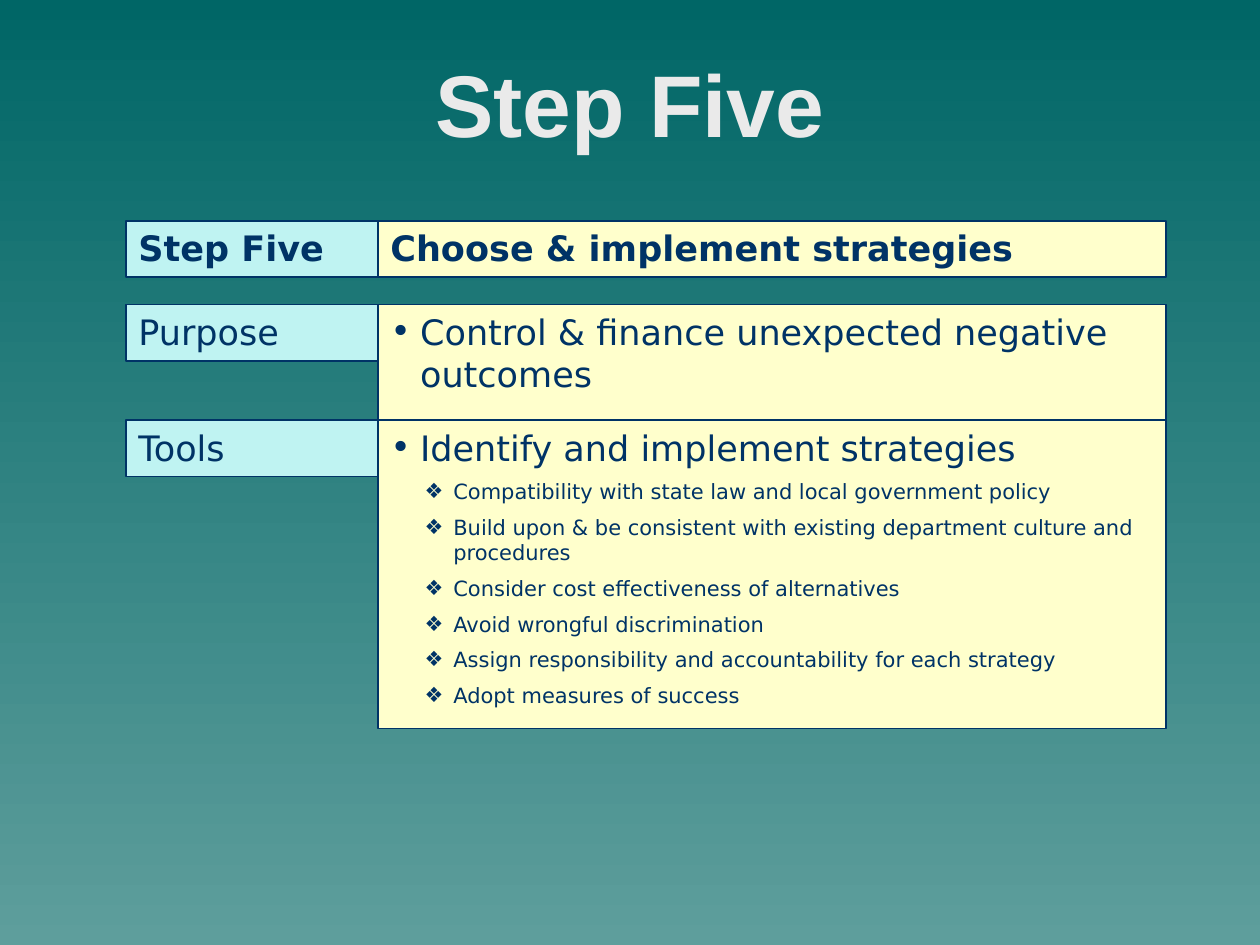
from dataclasses import dataclass

from lxml.etree import SubElement
from pptx import Presentation
from pptx.dml.color import RGBColor
from pptx.enum.shapes import MSO_SHAPE
from pptx.enum.text import MSO_ANCHOR, PP_ALIGN
from pptx.oxml.ns import qn
from pptx.slide import Slide
from pptx.util import Cm, Pt


@dataclass(frozen=True)
class Theme:
    background_top: str = "006666"
    background_bottom: str = "5E9E9C"
    title: str = "EAEAEA"
    ink: str = "003366"
    label_fill: str = "BFF3F2"
    content_fill: str = "FFFFCC"
    title_font: str = "Arial"
    body_font: str = "DejaVu Sans"
    title_size: int = 50
    body_size: int = 20
    detail_size: int = 12


@dataclass(frozen=True)
class Bullet:
    symbol: str
    indent: float
    hanging: float


@dataclass(frozen=True)
class Line:
    text: str
    size: int
    bold: bool = False
    bullet: Bullet | None = None


@dataclass(frozen=True)
class Row:
    label: str
    lines: tuple[Line, ...]
    top: float
    height: float
    bold: bool = False


THEME = Theme()
DOT = Bullet("•", 0.6, 0.6)
DIAMOND = Bullet("❖", 1.27, 0.58)
LABEL_LEFT, LABEL_WIDTH, LABEL_HEIGHT = 2.54, 5.08, 1.14
CONTENT_LEFT, CONTENT_WIDTH = LABEL_LEFT + LABEL_WIDTH, 15.88

TOOL_DETAILS = (
    "Compatibility with state law and local government policy",
    "Build upon & be consistent with existing department culture and procedures",
    "Consider cost effectiveness of alternatives",
    "Avoid wrongful discrimination",
    "Assign responsibility and accountability for each strategy",
    "Adopt measures of success",
)

ROWS = (
    Row(
        "Step Five",
        (Line("Choose & implement strategies", THEME.body_size, bold=True),),
        4.45, LABEL_HEIGHT, bold=True,
    ),
    Row(
        "Purpose",
        (Line("Control & finance unexpected negative outcomes", THEME.body_size, bullet=DOT),),
        6.14, 3.25,
    ),
    Row(
        "Tools",
        (
            Line("Identify and implement strategies", THEME.body_size, bullet=DOT),
            *(Line(detail, THEME.detail_size, bullet=DIAMOND) for detail in TOOL_DETAILS),
        ),
        8.47, 6.22,
    ),
)


def color(value: str) -> RGBColor:
    return RGBColor.from_string(value)


def add_bullet(paragraph, bullet: Bullet) -> None:
    properties = paragraph._p.get_or_add_pPr()
    properties.set("marL", str(Cm(bullet.indent)))
    properties.set("indent", str(-Cm(bullet.hanging)))
    SubElement(properties, qn("a:buFont"), typeface=THEME.body_font)
    SubElement(properties, qn("a:buChar"), char=bullet.symbol)


def add_run(paragraph, text: str, font_name: str, size: int, ink: str, bold: bool) -> None:
    run = paragraph.add_run()
    run.text = text
    run.font.name = font_name
    run.font.size = Pt(size)
    run.font.bold = bold
    run.font.color.rgb = color(ink)


def add_box(
    slide: Slide, left: float, top: float, width: float, height: float,
    fill: str, lines: tuple[Line, ...],
) -> None:
    shape = slide.shapes.add_shape(
        MSO_SHAPE.RECTANGLE, Cm(left), Cm(top), Cm(width), Cm(height)
    )
    shape.shadow.inherit = False
    shape.fill.solid()
    shape.fill.fore_color.rgb = color(fill)
    shape.line.color.rgb = color(THEME.ink)
    shape.line.width = Pt(1)
    frame = shape.text_frame
    frame.word_wrap = True
    frame.vertical_anchor = MSO_ANCHOR.TOP
    for index, line in enumerate(lines):
        paragraph = frame.add_paragraph() if index else frame.paragraphs[0]
        paragraph.alignment = PP_ALIGN.LEFT
        if index:
            paragraph.space_before = Pt(line.size / 2)
        if line.bullet:
            add_bullet(paragraph, line.bullet)
        add_run(paragraph, line.text, THEME.body_font, line.size, THEME.ink, line.bold)


def add_row(slide: Slide, row: Row) -> None:
    label = (Line(row.label, THEME.body_size, row.bold),)
    add_box(slide, LABEL_LEFT, row.top, LABEL_WIDTH, LABEL_HEIGHT, THEME.label_fill, label)
    add_box(
        slide, CONTENT_LEFT, row.top, CONTENT_WIDTH, row.height, THEME.content_fill, row.lines
    )


def set_background(slide: Slide) -> None:
    fill = slide.background.fill
    fill.gradient()
    fill.gradient_angle = 270
    for stop, value in zip(fill.gradient_stops, (THEME.background_top, THEME.background_bottom)):
        stop.color.rgb = color(value)


def set_title(slide: Slide, text: str) -> None:
    title = slide.shapes.title
    title.left, title.top, title.width, title.height = Cm(1.27), Cm(0.76), Cm(22.86), Cm(2.62)
    title.text_frame.vertical_anchor = MSO_ANCHOR.MIDDLE
    paragraph = title.text_frame.paragraphs[0]
    paragraph.alignment = PP_ALIGN.CENTER
    add_run(paragraph, text, THEME.title_font, THEME.title_size, THEME.title, True)


def main() -> None:
    presentation = Presentation()
    presentation.slide_width, presentation.slide_height = Cm(25.4), Cm(19.05)
    slide = presentation.slides.add_slide(presentation.slide_layouts[5])
    set_background(slide)
    set_title(slide, "Step Five")
    for row in ROWS:
        add_row(slide, row)
    presentation.save("out.pptx")


if __name__ == "__main__":
    main()
